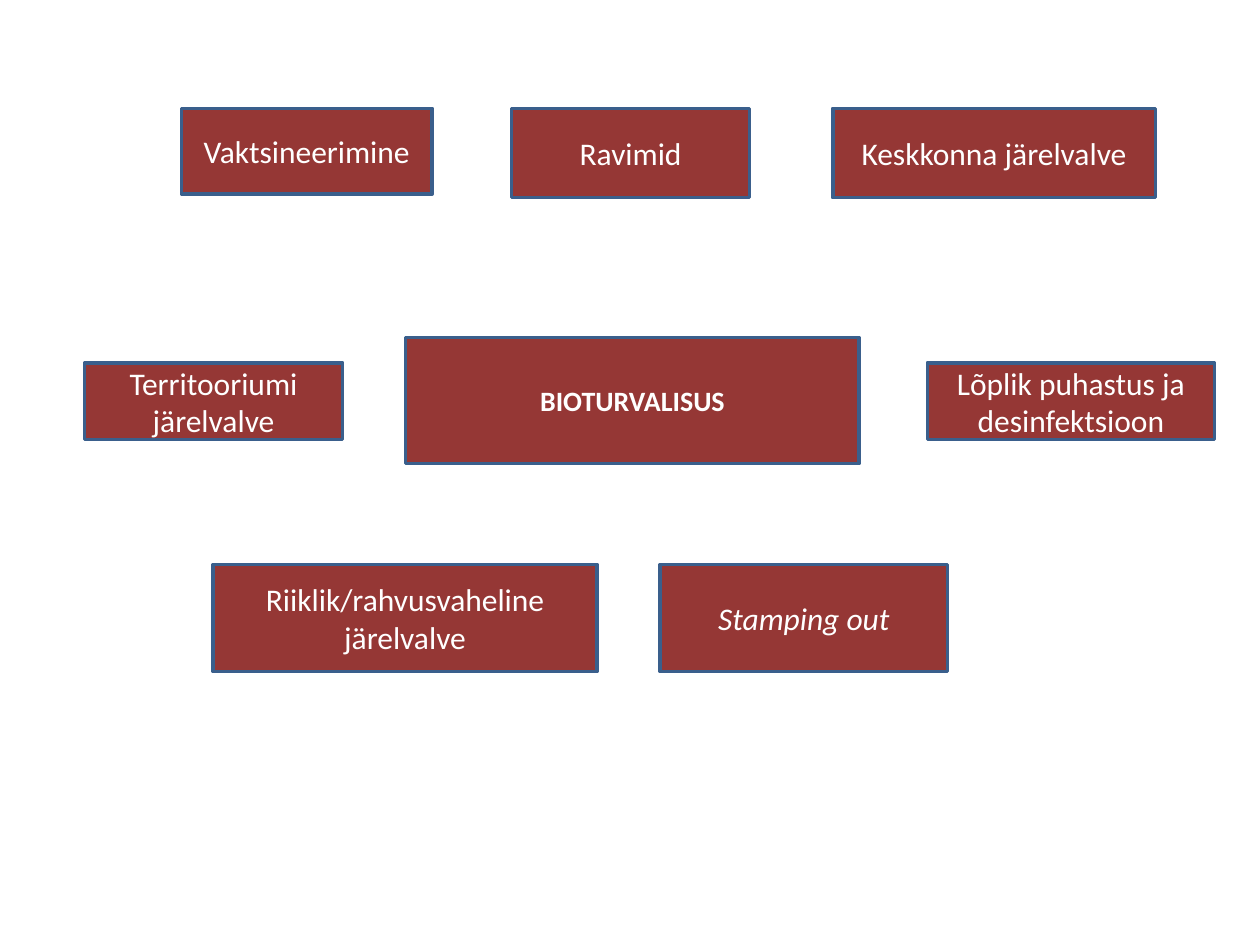
from pptx import Presentation
from pptx.dml.color import RGBColor
from pptx.enum.shapes import MSO_SHAPE
from pptx.enum.text import MSO_ANCHOR, PP_ALIGN
from pptx.util import Inches, Pt


def tint(part, code):
    part.rgb = RGBColor.from_string(code)


deck = Presentation()
deck.slide_width = Inches(10)
deck.slide_height = Inches(7.5)
slide = deck.slides.add_slide(deck.slide_layouts[6])

col = deck.slide_width / 100
row = deck.slide_height / 75

bands = [
    (26.8, 10, [
        (32.2, 36, 10, "BIOTURVALISUS", 16, True, False),
    ]),
    (8.6, 7.1, [
        (14.4, 19.9, 6.8, "Vaktsineerimine", 18, False, False),
        (40.6, 18.9, 7.1, "Ravimid", 18, False, False),
        (66.1, 25.6, 7.1, "Keskkonna järelvalve", 18, False, False),
    ]),
    (28.8, 6.1, [
        (6.7, 20.5, 6.1, "Territooriumi järelvalve", 18, False, False),
        (73.6, 22.8, 6.1, "Lõplik puhastus ja desinfektsioon", 18, False, False),
    ]),
    (44.8, 8.5, [
        (16.9, 30.5, 8.5, "Riiklik/rahvusvaheline järelvalve", 18, False, False),
        (52.4, 22.8, 8.5, "Stamping out", 18, False, True),
    ]),
]
bands = [(top, boxes) for top, _, boxes in bands]

for top, boxes in bands:
    for left, wide, high, words, size, bold, slant in boxes:
        box = slide.shapes.add_shape(
            MSO_SHAPE.RECTANGLE,
            round(left * col), round(top * row),
            round(wide * col), round(high * row))
        box.shadow.inherit = False
        box.fill.solid()
        tint(box.fill.fore_color, "953735")
        tint(box.line.color, "3A5F8C")
        box.line.width = Pt(2)

        frame = box.text_frame
        frame.word_wrap = True
        frame.vertical_anchor = MSO_ANCHOR.MIDDLE
        para = frame.paragraphs[0]
        para.alignment = PP_ALIGN.CENTER
        run = para.add_run()
        run.text = words
        run.font.name = "Calibri"
        run.font.size = Pt(size)
        run.font.bold = bold
        run.font.italic = slant
        tint(run.font.color, "FFFFFF")

deck.save("out.pptx")
